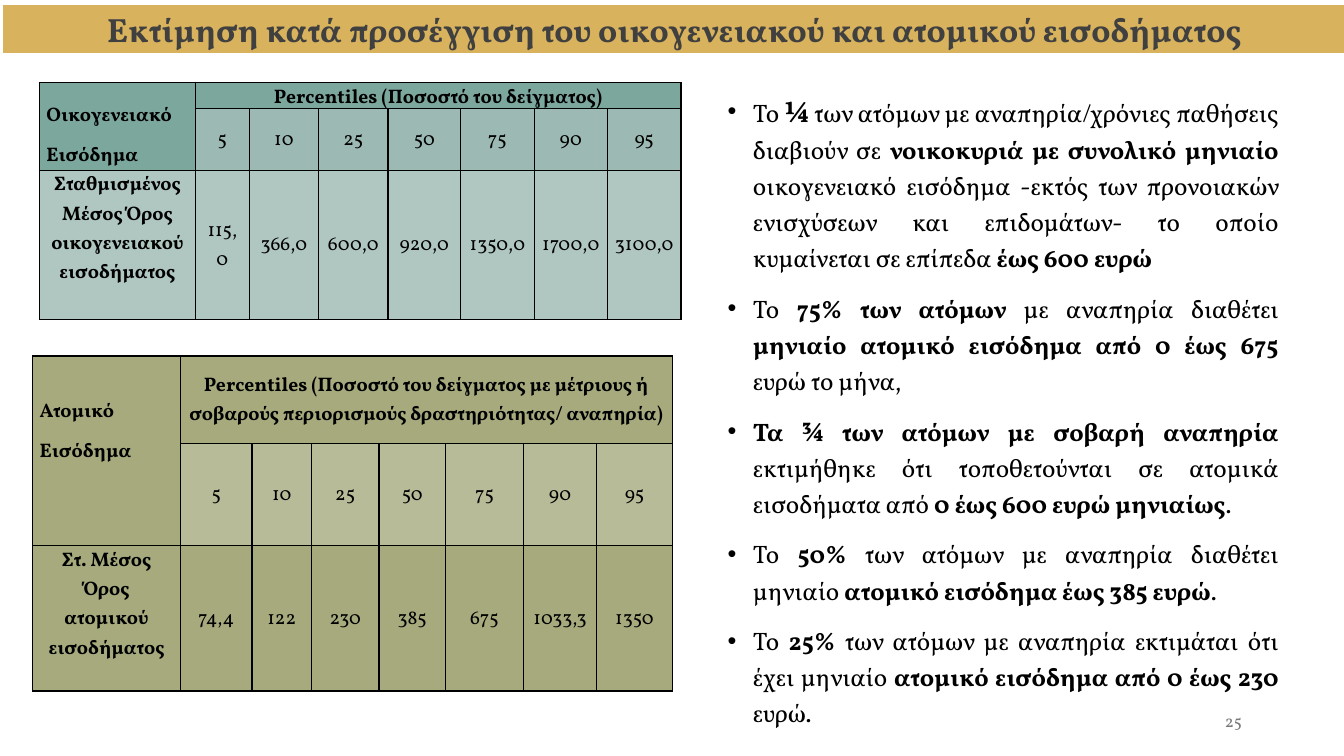
"""Build the slide on estimated household and personal income."""
from lxml import etree
from pptx import Presentation
from pptx import util as u
from pptx.dml import color
from pptx.enum import text
from pptx.oxml import ns

FONT = "Vollkorn"
RANKS = ["5", "10", "25", "50", "75", "90", "95"]
HOME = {
    "head": "Οικογενειακό\nΕισόδημα",
    "top": "Percentiles (Ποσοστό του δείγματος)",
    "label": "Σταθμισμένος Μέσος Όρος οικογενειακού εισοδήματος",
    "data": ["115,0", "366,0", "600,0", "920,0", "1350,0", "1700,0", "3100,0"],
    "cols": [3.94, 1.35, 1.75, 1.75, 1.83, 1.85, 1.85, 1.85],
    "rows": [0.66, 1.55, 3.76],
    "fills": ["7BA79D", "9CBAB3", "B0C7C1"],
    "anchor": text.MSO_ANCHOR.BOTTOM,
    "pad": 0,
}
OWN = {
    "head": "Ατομικό\nΕισόδημα",
    "top": "Percentiles (Ποσοστό του δείγματος με μέτριους ή σοβαρούς "
           "περιορισμούς δραστηριότητας/ αναπηρία)",
    "label": "Στ. Μέσος Όρος ατομικού εισοδήματος",
    "data": ["74,4", "122", "230", "385", "675", "1033,3", "1350"],
    "cols": [3.73, 1.8, 1.5, 1.7, 1.68, 1.96, 1.85, 1.9],
    "rows": [2.21, 2.46, 3.66],
    "fills": ["A6AA7D", "B8BB97", "A6AA7D"],
    "anchor": text.MSO_ANCHOR.TOP,
    "pad": 1.02,
}
POINTS = [
    "Το *¼* των ατόμων με αναπηρία/χρόνιες παθήσεις διαβιούν σε *νοικοκυριά με "
    "συνολικό μηνιαίο *οικογενειακό εισόδημα -εκτός των προνοιακών ενισχύσεων και "
    "επιδομάτων- το οποίο κυμαίνεται σε επίπεδα *έως 600 ευρώ",
    "Το *75% των ατόμων *με αναπηρία διαθέτει *μηνιαίο ατομικό εισόδημα από 0 έως "
    "675 *ευρώ το μήνα,",
    "*Τα ¾ των ατόμων με σοβαρή αναπηρία *εκτιμήθηκε ότι τοποθετούνται σε ατομικά "
    "εισοδήματα από *0 έως 600 ευρώ μηνιαίως*.",
    "Το *50%* των ατόμων με αναπηρία διαθέτει μηνιαίο *ατομικό εισόδημα έως 385 "
    "ευρώ*.",
    "Το *25%* των ατόμων με αναπηρία εκτιμάται ότι έχει μηνιαίο *ατομικό εισόδημα "
    "από 0 έως 230 *ευρώ.",
]


def rgb(code):
    """Turn a hex string into a colour."""
    return color.RGBColor.from_string(code)


def style(run, size, bold=False, hue="000000"):
    """Format one run."""
    font = run.font
    font.name, font.size, font.bold = FONT, u.Pt(size), bold
    font.color.rgb = rgb(hue)


def place(shape, box):
    """Move a shape to a box given in centimetres."""
    shape.left, shape.top, shape.width, shape.height = map(u.Cm, box)


def edge(cell):
    """Draw a thin black border round a cell."""
    props = cell._tc.get_or_add_tcPr()
    for side in ("a:lnL", "a:lnR", "a:lnT", "a:lnB"):
        line = etree.SubElement(props, ns.qn(side), w=str(u.Pt(1)))
        fill = etree.SubElement(line, ns.qn("a:solidFill"))
        etree.SubElement(fill, ns.qn("a:srgbClr"), val="000000")


def write(cell, words, bold, align, anchor):
    """Fill a cell with formatted text."""
    cell.text_frame.text = words
    cell.vertical_anchor = anchor
    for para in cell.text_frame.paragraphs:
        para.alignment = align
        para.line_spacing, para.space_after = 1.07, u.Pt(8)
        for run in para.runs:
            style(run, 14, bold)


def grid(slide, data, left, top):
    """Add an income table at the given corner."""
    cols, rows = data["cols"], data["rows"]
    frame = slide.shapes.add_table(len(rows), len(cols), u.Cm(left), u.Cm(top),
                                   u.Cm(sum(cols)), u.Cm(sum(rows)))
    table = frame.table
    table.first_row = table.horz_banding = False
    for col, width in zip(table.columns, cols):
        col.width = u.Cm(width)
    for row, height in zip(table.rows, rows):
        row.height = u.Cm(height)
    table.cell(0, 0).merge(table.cell(1, 0))
    table.cell(0, 1).merge(table.cell(0, len(cols) - 1))
    lines = [[data["head"], data["top"]], [None] + RANKS,
             [data["label"]] + data["data"]]
    mid, high = text.MSO_ANCHOR.MIDDLE, text.MSO_ANCHOR.TOP
    for r, line in enumerate(lines):
        for c in range(len(cols)):
            cell = table.cell(r, c)
            cell.margin_left = cell.margin_right = u.Cm(0.18)
            cell.margin_top = cell.margin_bottom = 0
            edge(cell)
            cell.fill.solid()
            cell.fill.fore_color.rgb = rgb(data["fills"][r])
            if c < len(line) and line[c]:
                write(cell, line[c], r == 0 or c == 0, text.PP_ALIGN.CENTER,
                      mid if c else high)
    head = table.cell(0, 0)
    head.margin_top = u.Cm(data["pad"])
    write(head, data["head"], True, text.PP_ALIGN.LEFT, data["anchor"])


def banner(slide, box):
    """Set the title in a gold band."""
    title = slide.shapes.title
    place(title, box)
    title.fill.solid()
    title.fill.fore_color.rgb = rgb("D8B25C")
    title.line.color.rgb = rgb("FFFFFF")
    title.line.width = u.Pt(2)
    frame = title.text_frame
    frame.text = "Εκτίμηση κατά προσέγγιση του οικογενειακού και ατομικού εισοδήματος"
    frame.auto_size = text.MSO_AUTO_SIZE.NONE
    frame.vertical_anchor = text.MSO_ANCHOR.MIDDLE
    frame.paragraphs[0].alignment = text.PP_ALIGN.CENTER
    style(frame.paragraphs[0].runs[0], 24, True, "404040")


def notes(slide, box):
    """Set the findings as a bulleted list; asterisks switch bold."""
    body = slide.placeholders[1]
    place(body, box)
    frame = body.text_frame
    frame.auto_size = text.MSO_AUTO_SIZE.NONE
    frame.text = "\n".join(POINTS)
    for para, point in zip(frame.paragraphs, POINTS):
        para.text = ""
        para.alignment = text.PP_ALIGN.JUSTIFY
        para.line_spacing, para.space_before = 1.2, u.Pt(10)
        props = para._p.get_or_add_pPr()
        props.set("marL", str(u.Cm(0.64)))
        props.set("indent", str(-u.Cm(0.64)))
        for i, part in enumerate(point.split("*")):
            if part:
                run = para.add_run()
                run.text = part
                style(run, 20 if part == "¼" else 18, i % 2 == 1)


def folio(slide, box):
    """Add the page number."""
    frame = slide.shapes.add_textbox(*map(u.Cm, box)).text_frame
    frame.word_wrap = True
    frame.vertical_anchor = text.MSO_ANCHOR.MIDDLE
    frame.text = "25"
    frame.paragraphs[0].alignment = text.PP_ALIGN.RIGHT
    style(frame.paragraphs[0].runs[0], 12, hue="797979")


def main():
    """Build and save the deck."""
    deck = Presentation()
    deck.slide_width, deck.slide_height = u.Cm(33.87), u.Cm(19.05)
    slide = deck.slides.add_slide(deck.slide_layouts[1])
    notes(slide, (18.08, 2.08, 14.4, 16.48))
    folio(slide, (23.93, 17.65, 7.62, 1.02))
    grid(slide, HOME, 0.99, 2.08)
    grid(slide, OWN, 0.82, 8.97)
    banner(slide, (0.05, 0.1, 33.87, 1.27))
    deck.save("out.pptx")


if __name__ == "__main__":
    main()
